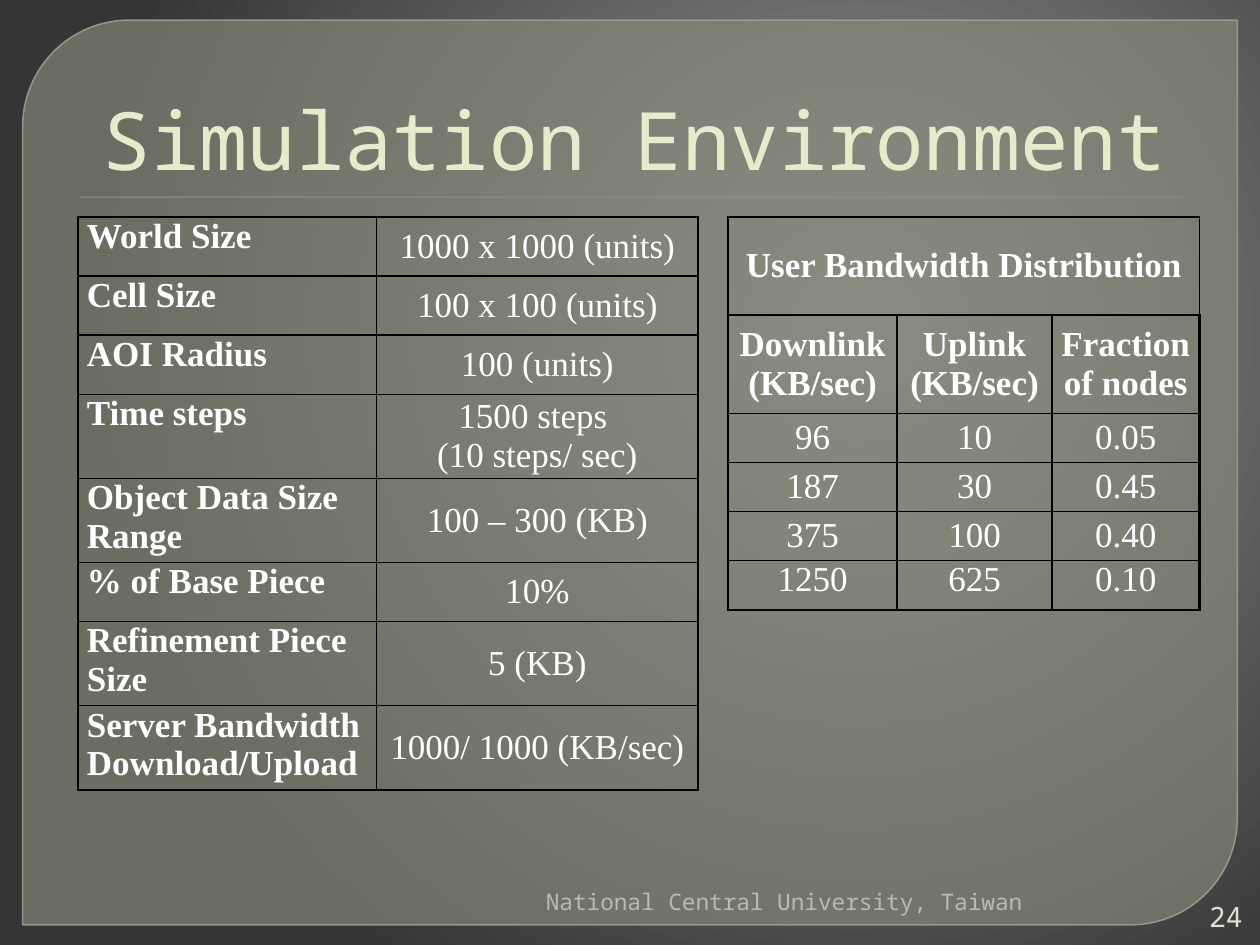
from dataclasses import dataclass

import pptx
import pptx.dml.color
import pptx.enum.shapes
import pptx.enum.text
import pptx.oxml
import pptx.oxml.ns
import pptx.util
from pptx.util import Inches

ALIGN = pptx.enum.text.PP_ALIGN
ANCHOR = pptx.enum.text.MSO_ANCHOR
SHAPE = pptx.enum.shapes.MSO_SHAPE
NS = 'xmlns:a="http://schemas.openxmlformats.org/drawingml/2006/main"'


@dataclass(frozen=True)
class Theme:
    heading_font: str = "Noto Sans Mono"
    table_font: str = "Times New Roman"
    title: str = "E7EACB"
    footer: str = "B9BBB2"
    number: str = "E0E0D4"
    cell: str = "FFFFFF"
    border: str = "000000"
    panel: str = "888B7B"
    panel_line: str = "9DA090"
    rule: str = "72A376"
    backdrop: tuple = ((0, "8C8C8C"), (20, "7F7F7F"), (100, "353535"))
    title_size: float = 46
    footer_size: float = 13
    number_size: float = 16
    cell_size: float = 20
    outer_line: float = 1.5
    inner_line: float = 1


@dataclass(frozen=True)
class Box:
    left: float
    top: float
    width: float
    height: float

    def lengths(self):
        return [Inches(v) for v in (self.left, self.top, self.width, self.height)]


@dataclass(frozen=True)
class Label:
    text: str
    box: Box
    size: float
    color: str
    align: ALIGN
    anchor: ANCHOR = ANCHOR.TOP
    left_inset: float = 0.1


@dataclass(frozen=True)
class Grid:
    """A table; the first header_rows rows and header_cols columns are bold."""
    box: Box
    cols: tuple
    heights: tuple
    rows: tuple
    header_rows: int = 0
    header_cols: int = 0


T = Theme()

LABELS = (
    Label("Simulation Environment", Box(0.5, 0.28, 9, 1.25), T.title_size, T.title,
          ALIGN.CENTER, ANCHOR.BOTTOM, left_inset=0.16),
    Label("National Central University, Taiwan", Box(3.6, 7, 4.61, 0.3),
          T.footer_size, T.footer, ALIGN.RIGHT),
    Label("24", Box(9.45, 7.12, 0.51, 0.3), T.number_size, T.number,
          ALIGN.RIGHT, ANCHOR.MIDDLE),
)

SETTINGS = Grid(
    Box(0.62, 1.72, 4.92, 4.54), (2.37, 2.55), (0.47,) * 8,
    (("World Size", "1000 x 1000 (units)"),
     ("Cell Size", "100 x 100 (units)"),
     ("AOI Radius", "100 (units)"),
     ("Time steps", "1500 steps \n(10 steps/ sec)"),
     ("Object Data Size Range", "100 – 300 (KB)"),
     ("% of Base Piece", "10%"),
     ("Refinement Piece Size", "5 (KB)"),
     ("Server Bandwidth Download/Upload", "1000/ 1000 (KB/sec)")),
    header_cols=1)

BANDWIDTH = Grid(
    Box(5.78, 1.72, 3.75, 3.13), (1.34, 1.23, 1.17), (0.78,) * 2 + (0.39,) * 4,
    (("User Bandwidth Distribution", "", ""),
     ("Downlink (KB/sec)", "Uplink (KB/sec)", "Fraction of nodes"),
     ("96", "10", "0.05"),
     ("187", "30", "0.45"),
     ("375", "100", "0.40"),
     ("1250", "625", "0.10")),
    header_rows=2)


def rgb(color: str):
    return pptx.dml.color.RGBColor.from_string(color)


def write(tf, text: str, *, font: str, size: float, color: str, align=ALIGN.LEFT,
          bold: bool = False) -> None:
    """Fill the first paragraph; a newline becomes a line break."""
    p = tf.paragraphs[0]
    p.alignment = align
    for i, line in enumerate(text.split("\n")):
        if i:
            p.add_line_break()
        r = p.add_run()
        r.text = line
        r.font.name, r.font.size, r.font.bold = font, pptx.util.Pt(size), bold
        r.font.color.rgb = rgb(color)


def set_background(s) -> None:
    s.background.fill.gradient()
    grad = s.element.find(".//" + pptx.oxml.ns.qn("a:gradFill"))
    stops = "".join(f'<a:gs pos="{pos * 1000}"><a:srgbClr val="{color}"/></a:gs>'
                    for pos, color in T.backdrop)
    grad.getparent().replace(grad, pptx.oxml.parse_xml(
        f'<a:gradFill {NS} rotWithShape="1"><a:gsLst>{stops}</a:gsLst><a:path path="circle">'
        '<a:fillToRect l="68000" t="35000" r="32000" b="65000"/></a:path></a:gradFill>'))


def set_alpha(paint, percent: int) -> None:
    paint.find(".//" + pptx.oxml.ns.qn("a:srgbClr")).append(
        pptx.oxml.parse_xml(f'<a:alpha {NS} val="{percent * 1000}"/>'))


def add_filled(s, kind, box: Box, color: str):
    sp = s.shapes.add_shape(kind, *box.lengths())
    sp.shadow.inherit = False
    sp.fill.solid()
    sp.fill.fore_color.rgb = rgb(color)
    sp.line.fill.background()
    return sp


def add_panel(s) -> None:
    sp = add_filled(s, SHAPE.ROUND_2_DIAG_RECTANGLE, Box(0.18, 0.16, 9.64, 7.18), T.panel)
    sp.adjustments[0], sp.adjustments[1] = 0.118, 0
    set_alpha(sp.element.spPr.find(pptx.oxml.ns.qn("a:solidFill")), 65)
    sp.line.color.rgb = rgb(T.panel_line)
    sp.line.width = pptx.util.Pt(0.87)
    set_alpha(sp.element.spPr.find(pptx.oxml.ns.qn("a:ln")), 88)


def add_title_rule(s) -> None:
    sp = add_filled(s, SHAPE.RECTANGLE, Box(0.64, 1.56, 8.75, 0.01), T.rule)
    sp.element.spPr.find(pptx.oxml.ns.qn("a:effectLst")).append(pptx.oxml.parse_xml(
        f'<a:outerShdw {NS} blurRad="12700" dist="12700" dir="5400000">'
        '<a:srgbClr val="000000"><a:alpha val="75000"/></a:srgbClr></a:outerShdw>'))


def add_label(s, label: Label) -> None:
    tf = s.shapes.add_textbox(*label.box.lengths()).text_frame
    tf.word_wrap = True
    tf.vertical_anchor = label.anchor
    tf.margin_left = Inches(label.left_inset)
    write(tf, label.text, font=T.heading_font, size=label.size, color=label.color,
          align=label.align)


def set_borders(cell, outer: dict) -> None:
    """Draw the four sides, heavier where the side is on the table's edge."""
    tc_pr = cell._tc.get_or_add_tcPr()
    for side, is_outer in outer.items():
        width = pptx.util.Pt(T.outer_line if is_outer else T.inner_line)
        tc_pr.append(pptx.oxml.parse_xml(
            f'<a:ln{side} {NS} w="{width}"><a:solidFill><a:srgbClr val="{T.border}"/>'
            f'</a:solidFill><a:prstDash val="solid"/></a:ln{side}>'))


def add_grid(s, grid: Grid):
    last_row, last_col = len(grid.rows) - 1, len(grid.cols) - 1
    frame = s.shapes.add_table(last_row + 1, last_col + 1, *grid.box.lengths())
    table = frame.table
    table.first_row = table.horz_banding = False
    for column, width in zip(table.columns, grid.cols):
        column.width = Inches(width)
    for row, height in zip(table.rows, grid.heights):
        row.height = Inches(height)
    frame.height = Inches(grid.box.height)
    for i, texts in enumerate(grid.rows):
        for j, text in enumerate(texts):
            cell = table.cell(i, j)
            row_label = j < grid.header_cols
            cell.margin_left = cell.margin_right = Inches(0.07)
            cell.margin_top = cell.margin_bottom = 0
            cell.vertical_anchor = ANCHOR.TOP if row_label else ANCHOR.MIDDLE
            set_borders(cell, {"L": j == 0, "R": j == last_col,
                               "T": i == 0, "B": i == last_row})
            cell.fill.background()
            if text:
                write(cell.text_frame, text, font=T.table_font, size=T.cell_size,
                      color=T.cell, bold=row_label or i < grid.header_rows,
                      align=ALIGN.LEFT if row_label else ALIGN.CENTER)
    return table


def main() -> None:
    prs = pptx.Presentation()
    prs.slide_width, prs.slide_height = Inches(10), Inches(7.5)
    s = prs.slides.add_slide(prs.slide_layouts[6])
    set_background(s)
    add_panel(s)
    add_title_rule(s)
    for label in LABELS:
        add_label(s, label)
    add_grid(s, SETTINGS)
    bandwidth = add_grid(s, BANDWIDTH)
    bandwidth.cell(0, 0).merge(bandwidth.cell(0, 2))
    for cell in bandwidth.rows[5].cells:
        cell.vertical_anchor = ANCHOR.TOP
    prs.save("out.pptx")


if __name__ == "__main__":
    main()
